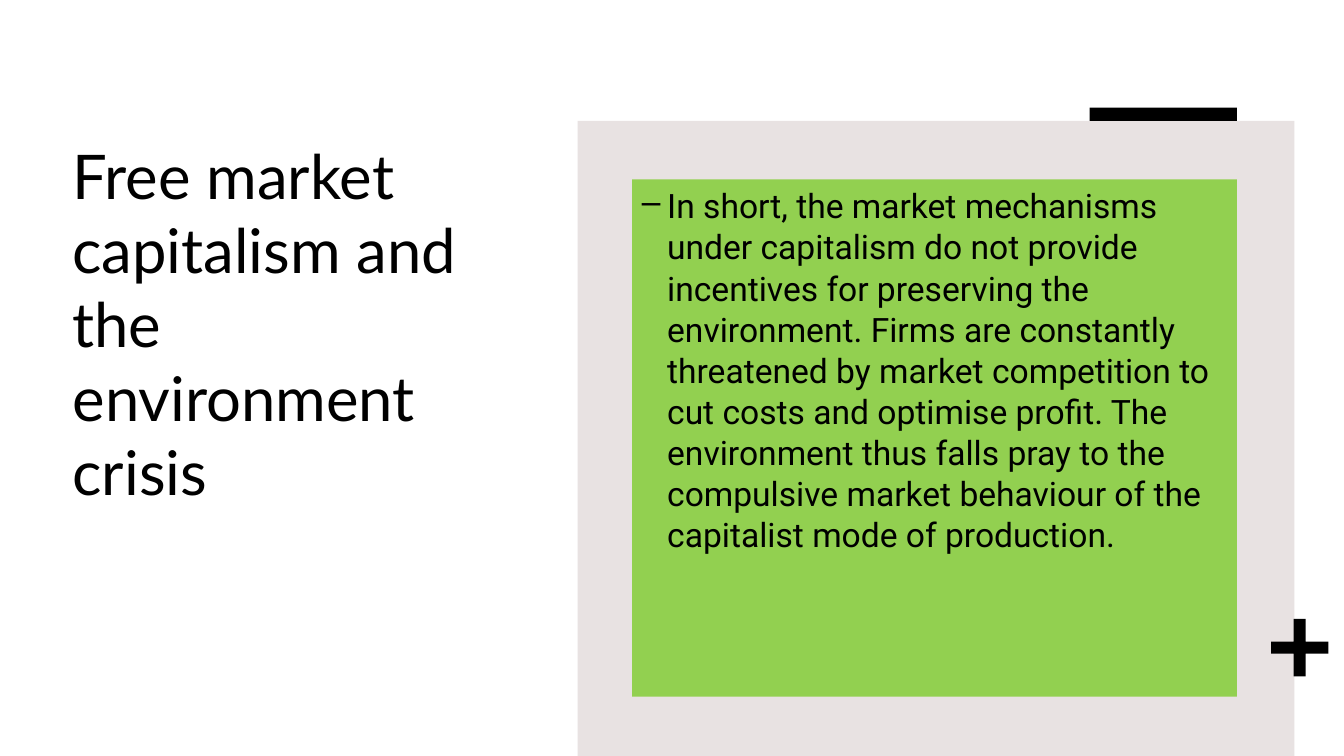
from dataclasses import dataclass

from lxml import etree
from pptx import Presentation
from pptx.dml.color import RGBColor
from pptx.enum.shapes import MSO_SHAPE
from pptx.enum.text import MSO_ANCHOR, MSO_AUTO_SIZE, PP_ALIGN
from pptx.oxml.ns import qn
from pptx.util import Pt

RECTANGLE = MSO_SHAPE.RECTANGLE
PLUS = MSO_SHAPE.CROSS
TOP = MSO_ANCHOR.TOP
LEFT = PP_ALIGN.LEFT
NO_FIT = MSO_AUTO_SIZE.NONE
TITLE_ONLY = 5


@dataclass(frozen=True)
class Theme:
    """Colours, fonts and type sizes of the deck."""
    ink: RGBColor = RGBColor(0x00, 0x00, 0x00)
    paper: RGBColor = RGBColor(0xFF, 0xFF, 0xFF)
    panel: RGBColor = RGBColor(0xE8, 0xE2, 0xE2)
    card: RGBColor = RGBColor(0x92, 0xD0, 0x50)
    title_font: str = "Lato"
    body_font: str = "Roboto"
    title_size: float = 44
    body_size: float = 24


@dataclass(frozen=True)
class Box:
    """A rectangle measured in points."""
    left: float
    top: float
    width: float
    height: float

    def lengths(self):
        """Return the four measures as slide lengths."""
        return [Pt(value) for value in (self.left, self.top, self.width, self.height)]


THEME = Theme()
TITLE = "Free market capitalism and the environment crisis"
ARGUMENT = (
    "In short, the market mechanisms under capitalism do not provide incentives "
    "for preserving the environment. Firms are constantly threatened by market "
    "competition to cut costs and optimise profit. The environment thus falls pray "
    "to the compulsive market behaviour of the capitalist mode of production."
)


def add_block(page, kind, box, color):
    """Add a flat shape without outline or shadow."""
    block = page.shapes.add_shape(kind, *box.lengths())
    block.shadow.inherit = False
    block.fill.solid()
    block.fill.fore_color.rgb = color
    block.line.fill.background()
    return block


def write(shape, text, font, size):
    """Write one left-aligned paragraph at the top of a shape."""
    frame = shape.text_frame
    frame.word_wrap = True
    frame.auto_size = NO_FIT
    frame.vertical_anchor = TOP
    frame.text = text
    para = frame.paragraphs[0]
    para.alignment = LEFT
    para.font.name = font
    para.font.size = Pt(size)
    para.font.color.rgb = THEME.ink
    return para


def add_dash_bullet(para, indent):
    """Give a paragraph a dash bullet with a hanging indent."""
    properties = para._p.get_or_add_pPr()
    properties.set("marL", str(Pt(indent)))
    properties.set("indent", str(-Pt(indent)))
    bullet = etree.SubElement(properties, qn("a:buChar"))
    bullet.set("char", "–")
    properties.remove(bullet)
    properties.find(qn("a:defRPr")).addprevious(bullet)


def place_title(page, box):
    """Place the slide title in its box."""
    title = page.shapes.title
    title.left, title.top, title.width, title.height = box.lengths()
    para = write(title, TITLE, THEME.title_font, THEME.title_size)
    para.line_spacing = 1.0


def place_argument(page, box):
    """Build the panel with its ornaments and the card of text."""
    card = Box(box.left + 38.9, box.top + 41.8, 432, 369.4)
    bar_width, bar_height = 105.1, 9.4
    bar = Box(card.left + card.width - bar_width, box.top - bar_height,
              bar_width, bar_height)
    plus = Box(box.left + box.width - 16.6, box.top + 355.7, 41, 41)

    add_block(page, RECTANGLE, box, THEME.panel)
    add_block(page, PLUS, plus, THEME.ink).adjustments[0] = 0.395
    add_block(page, RECTANGLE, bar, THEME.ink)
    note = add_block(page, RECTANGLE, card, THEME.card)
    para = write(note, ARGUMENT, THEME.body_font, THEME.body_size)
    para.line_spacing = 1.02
    para.space_before = Pt(10)
    add_dash_bullet(para, 18)


def main():
    """Build the deck and save it."""
    deck = Presentation()
    deck.slide_width, deck.slide_height = Pt(960), Pt(540)
    page = deck.slides.add_slide(deck.slide_layouts[TITLE_ONLY])
    page.background.fill.solid()
    page.background.fill.fore_color.rgb = THEME.paper
    place_title(page, Box(44.6, 95, 324, 368))
    place_argument(page, Box(412.6, 86.4, 511.9, 453.6))
    deck.save("out.pptx")


if __name__ == "__main__":
    main()
